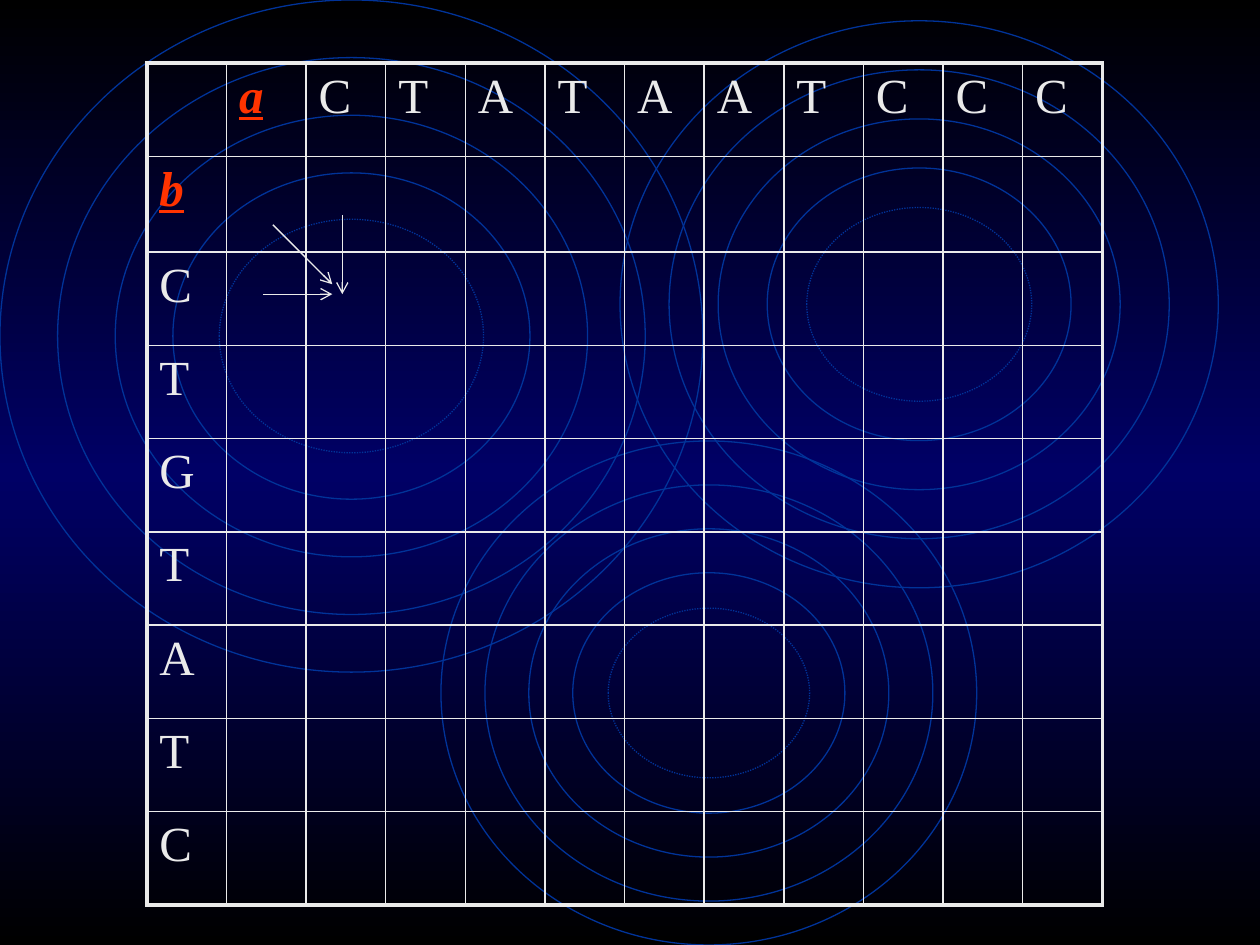
import copy

import lxml.etree
import pptx
import pptx.dml.color
import pptx.enum.dml
import pptx.enum.shapes
import pptx.oxml.ns
import pptx.util

Cm = pptx.util.Cm
Pt = pptx.util.Pt
qn = pptx.oxml.ns.qn

CHALK = "EAEAEA"
RED = "FF3300"
RING_BLUE = "003399"
TOP_SEQUENCE = "CTATAATCCC"
SIDE_SEQUENCE = "CTGTATC"
RING_INSETS = (0, 0.082, 0.164, 0.246, 0.312)


def rgb(hex_code):
    """Return the colour for a hex string."""
    return pptx.dml.color.RGBColor.from_string(hex_code)


def paint_background(slide):
    """Fill the slide with a vertical black-navy-black gradient."""
    fill = slide.background.fill
    fill.gradient()
    fill.gradient_angle = 270
    stop_list = slide.element.find(".//" + qn("a:gsLst"))
    stop_list.append(copy.deepcopy(stop_list[0]))
    colours = ("000000", "000066", "000000")
    for index, (stop, colour) in enumerate(zip(fill.gradient_stops, colours)):
        stop.color.rgb = rgb(colour)
        stop.position = index / 2


def add_ripple(slide, left, top, width, height):
    """Draw nested rings in the box, the innermost one dotted."""
    for share in RING_INSETS:
        inset = share * width
        ring = slide.shapes.add_shape(
            pptx.enum.shapes.MSO_SHAPE.OVAL,
            Cm(left + inset), Cm(top + inset),
            Cm(width - 2 * inset), Cm(height - 2 * inset))
        ring.shadow.inherit = False
        ring.fill.background()
        ring.line.color.rgb = rgb(RING_BLUE)
        ring.line.width = Pt(0.75)
    ring.line.dash_style = pptx.enum.dml.MSO_LINE.ROUND_DOT


def add_border(cell, position, side, width):
    """Give one side of a cell a solid line."""
    border = lxml.etree.Element(qn("a:ln" + side), w=str(Pt(width)))
    solid = lxml.etree.SubElement(border, qn("a:solidFill"))
    lxml.etree.SubElement(solid, qn("a:srgbClr"), val=CHALK)
    cell._tc.get_or_add_tcPr().insert(position, border)


def write_letter(cell, letter, is_name):
    """Write a base, or a sequence name in red bold italics."""
    paragraph = cell.text_frame.paragraphs[0]
    spacing = lxml.etree.SubElement(
        paragraph._p.get_or_add_pPr(), qn("a:spcBef"))
    lxml.etree.SubElement(spacing, qn("a:spcPct"), val="20000")
    run = paragraph.add_run()
    run.text = letter
    font = run.font
    font.name = "Times New Roman"
    font.size = Pt(28)
    font.bold = font.italic = font.underline = is_name
    font.color.rgb = rgb(RED if is_name else CHALK)


def add_alignment_grid(slide, left, top, width, height):
    """Place the alignment matrix with sequence a across and b down."""
    top_labels = ["", "a", *TOP_SEQUENCE]
    side_labels = ["", "b", *SIDE_SEQUENCE]
    last_row, last_column = len(side_labels) - 1, len(top_labels) - 1
    grid = slide.shapes.add_table(
        len(side_labels), len(top_labels),
        Cm(left), Cm(top), Cm(width), Cm(height)).table
    grid.first_row = grid.horz_banding = False
    for column in grid.columns:
        column.width = Cm(width / len(top_labels))
    for row in grid.rows:
        row.height = Cm(1.88)
    grid.rows[1].height = Cm(1.93)

    for r, side_label in enumerate(side_labels):
        for c, top_label in enumerate(top_labels):
            cell = grid.cell(r, c)
            cell.fill.background()
            outer_sides = {"L": c == 0, "R": c == last_column,
                           "T": r == 0, "B": r == last_row}
            for position, (side, outer) in enumerate(outer_sides.items()):
                add_border(cell, position, side, 2.25 if outer else 1)
            letter = top_label if r == 0 else side_label if c == 0 else ""
            if letter:
                write_letter(cell, letter, letter in ("a", "b"))


def add_step_arrows(slide, left, top):
    """Draw the three moves that lead into the first matching cell."""
    moves = (((1.6, 0), (1.6, 1.6)),
             ((0, 1.6), (1.4, 1.6)),
             ((0.2, 0.2), (1.4, 1.4)))
    for (start_x, start_y), (end_x, end_y) in moves:
        move = slide.shapes.add_connector(
            pptx.enum.shapes.MSO_CONNECTOR.STRAIGHT,
            Cm(left + start_x), Cm(top + start_y),
            Cm(left + end_x), Cm(top + end_y))
        move.line.color.rgb = rgb(CHALK)
        move.line.width = Pt(0.75)
        lxml.etree.SubElement(
            move.line._get_or_add_ln(), qn("a:tailEnd"), type="arrow")
        lxml.etree.SubElement(move._element.spPr, qn("a:effectLst"))


def main():
    """Build and save the alignment slide."""
    deck = pptx.Presentation()
    deck.slide_width, deck.slide_height = Cm(25.4), Cm(19.05)
    slide = deck.slides.add_slide(deck.slide_layouts[6])
    paint_background(slide)
    add_ripple(slide, 0, 0, 14.17, 13.55)
    add_ripple(slide, 8.89, 8.89, 10.8, 10.16)
    add_ripple(slide, 12.5, 0.42, 12.06, 11.43)
    add_alignment_grid(slide, 2.96, 1.27, 19.26, 16.97)
    add_step_arrows(slide, 5.3, 4.33)
    deck.save("out.pptx")


if __name__ == "__main__":
    main()
